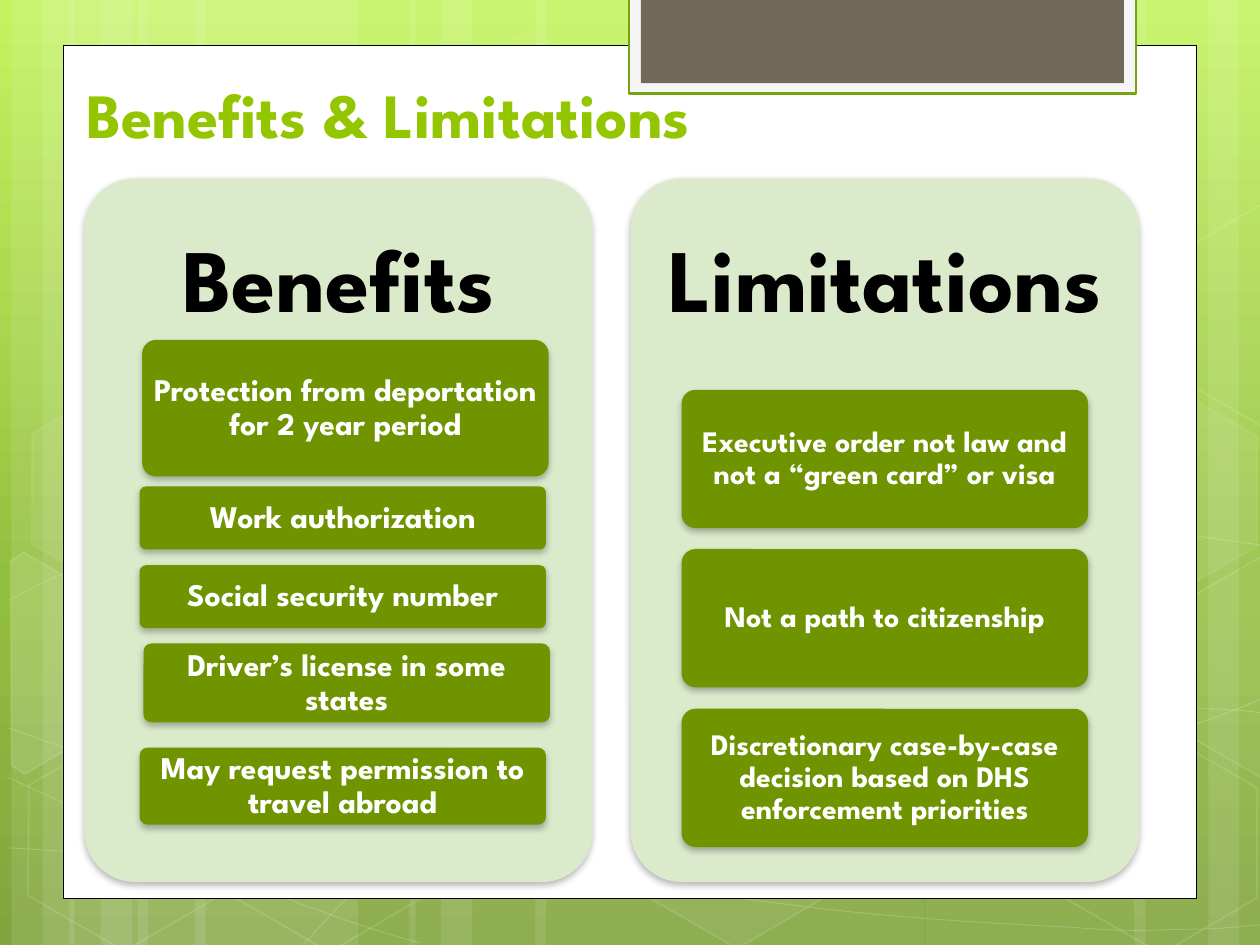
import pptx
import pptx.util
import pptx.dml.color
import pptx.enum.shapes
import pptx.enum.text
import pptx.oxml
import pptx.oxml.ns

Pt = pptx.util.Pt
RGB = pptx.dml.color.RGBColor
KIND = pptx.enum.shapes.MSO_SHAPE
ALIGN = pptx.enum.text.PP_ALIGN
ANCHOR = pptx.enum.text.MSO_ANCHOR
qn = pptx.oxml.ns.qn

WHITE = RGB(0xFF, 0xFF, 0xFF)
BLACK = RGB(0, 0, 0)
LIME = RGB(0x94, 0xC6, 0x00)
MINT = RGB(0xDC, 0xEA, 0xCC)
GREEN = RGB(0x6F, 0x94, 0x00)
EDGE = RGB(0x74, 0xA5, 0x10)
PALE = RGB(0xF5, 0xF5, 0xF5)
BROWN = RGB(0x71, 0x68, 0x5A)
SKY = [(0, "C3F35F"), (62, "93BF3F"), (100, "81A53E")]
FONT = "League Spartan"
NS = 'xmlns:a="http://schemas.openxmlformats.org/drawingml/2006/main"'
SHADOW = (f'<a:outerShdw {NS} blurRad="50800" dist="25400" dir="5400000" rotWithShape="0">'
          '<a:srgbClr val="000000"><a:alpha val="28000"/></a:srgbClr></a:outerShdw>')


def paint(shape, fill=None, line=None, width=1, solid=100, ink=100):
    """Set fill and line; solid and ink are their opacities in percent."""
    shape.shadow.inherit = False
    for part, color, alpha in ((shape.fill, fill, solid), (shape.line.fill, line, ink)):
        if color is None or alpha == 0:
            part.background()
            continue
        part.solid()
        part.fore_color.rgb = color
        if alpha < 100:
            tint = part._xPr.find(".//" + qn("a:srgbClr"))
            tint.append(pptx.oxml.parse_xml(f'<a:alpha {NS} val="{alpha * 1000}"/>'))
    if line is not None:
        shape.line.width = Pt(width)


def write(frame, text, size, color, anchor, align, pad):
    """Put one bold paragraph in the frame; pad is its side and top margin."""
    frame.word_wrap = True
    frame.auto_size = pptx.enum.text.MSO_AUTO_SIZE.NONE
    frame.vertical_anchor = anchor
    frame.margin_left = frame.margin_right = Pt(pad[0])
    frame.margin_top = frame.margin_bottom = Pt(pad[1])
    para = frame.paragraphs[0]
    para.text = text
    para.alignment = align
    para.line_spacing = 0.9
    font = para.font
    font.name, font.size, font.bold = FONT, Pt(size), True
    font.color.rgb = color


deck = pptx.Presentation()
deck.slide_width, deck.slide_height = Pt(720), Pt(540)
slide = deck.slides.add_slide(deck.slide_layouts[5])
shapes = slide.shapes

# Backdrop gradient
back = slide.background.fill
back.gradient()
back.gradient_angle = 270
stops = back._fill._gradFill.find(qn("a:gsLst"))
for stop in list(stops):
    stops.remove(stop)
for pos, color in SKY:
    stops.append(pptx.oxml.parse_xml(
        f'<a:gs {NS} pos="{pos * 1000}"><a:srgbClr val="{color}"/></a:gs>'))

# Light vertical bars: left, width, turn
bars = [(78.5, 126, 0), (6.5, 36, 0), (24.5, 60, 0), (111.5, 126, 0), (39.5, 36, 0),
        (57.5, 60, 0), (528.5, 126, 180), (690.5, 36, 180), (648, 60, 180),
        (306, 222, 0), (234, 36, 0), (252, 60, 0)]
for left, wide, turn in bars:
    bar = shapes.add_shape(KIND.RECTANGLE, Pt(left), 0, Pt(wide), Pt(540))
    bar.rotation = turn
    paint(bar, WHITE, solid=10)

# Thin curves: a start, then three Bezier points for each piece
curves = [
    [(5, 484.5), (44, 487), (83, 489), (137, 488), (191, 487), (258, 486), (330, 479),
     (402, 472), (504, 458), (570, 444), (636, 431), (703, 409), (725, 397)],
    [(5, 343), (26, 332), (47, 321), (87, 310), (128, 299), (186, 284), (250, 279),
     (314, 274), (392, 273), (471, 279), (550, 284), (682, 307), (725, 312)],
    [(4, 444), (91, 484), (178, 523), (241, 539)],
    [(5, 416), (27, 424), (50, 432), (92, 443.5), (134, 454), (197, 472), (257, 485),
     (317, 497), (392, 510), (452, 517), (512, 525), (576, 528), (614, 530),
     (652, 533), (662, 531), (680, 531), (699, 531), (712, 529), (725, 528)],
    [(174, 539), (187, 525), (200, 510), (217, 497), (235, 484), (259, 470), (279, 460),
     (300, 450), (312, 446), (338, 438), (364, 431), (413, 421), (438, 416),
     (464, 411), (467, 411), (490, 410), (512, 408), (547, 405), (572, 405),
     (597, 404), (638, 405), (638, 405), (654, 405), (670, 405), (686, 405),
     (699, 405), (711, 406), (718, 407), (724, 408), (722, 407), (724, 408)],
]
for nodes in curves:
    dots = [(Pt(x), Pt(y)) for x, y in nodes]
    pen = shapes.build_freeform(*dots[0])
    pen.add_line_segments(dots[1:], close=False)
    curve = pen.convert_to_shape()
    trail = curve._element.spPr.find(".//" + qn("a:path"))
    legs = trail.findall(qn("a:lnTo"))
    for i in range(0, len(legs), 3):
        bend = pptx.oxml.parse_xml(f"<a:cubicBezTo {NS}/>")
        trail.append(bend)
        for leg in legs[i:i + 3]:
            bend.append(leg[0])
            trail.remove(leg)
    paint(curve, None, WHITE, 0.5, ink=20)

# Hexagons, whole and cut off at the slide's edges
hexes = [(240.5, 26, 4, 8), (358, 424, 6, 12), (8, 425.5, 0, 12), (10, 224.5, 7, 8),
         (125, 426, 0, 12), (542, 326, 10, 12), (600.5, 427, 0, 12), (600.5, 226, 7, 8)]
for left, top, solid, ink in hexes:
    cell = shapes.add_shape(KIND.HEXAGON, Pt(left), Pt(top), Pt(126), Pt(109.5))
    cell.adjustments[0], cell.adjustments[1] = 0.285, 1.155
    cell.rotation = 30
    paint(cell, WHITE, WHITE, 1, solid, ink)

# Offsets from the centre, before the turn
west = [(-50, -47), (-46, -55), (18, -54.5), (49, 0), (18, 54.5), (9, 54)]
east = [(-49, -1), (-18, -55), (-12, -55), (48.5, 49.5), (45.5, 54.5), (-17.5, 54.5)]
for nodes, midx, midy, solid in ((west, 26, 386, 10), (east, 709, 374.5, 4),
                                 (east, 709, 173.5, 0)):
    dots = [(Pt(midx + x), Pt(midy + y)) for x, y in nodes]
    pen = shapes.build_freeform(*dots[0])
    pen.add_line_segments(dots[1:])
    cell = pen.convert_to_shape()
    cell.rotation = 30
    paint(cell, WHITE, WHITE, 1, solid, 12)

# White page and the tab at its top
for left, top, wide, high, fill, line, width in (
        (36, 26, 648, 487.5, WHITE, BLACK, 0.5),
        (359.25, -1.75, 289.75, 55.25, PALE, EDGE, 1.25),
        (366.25, -1.5, 276, 49, BROWN, None, 0)):
    page = shapes.add_shape(KIND.RECTANGLE, Pt(left), Pt(top), Pt(wide), Pt(high))
    paint(page, fill, line, width)

title = shapes.title
title.left, title.top, title.width, title.height = Pt(42), Pt(42), Pt(552), Pt(48)
write(title.text_frame, "Benefits & Limitations", 36, LIME, ANCHOR.BOTTOM, ALIGN.LEFT, (7.2, 3.6))
title.text_frame.paragraphs[0].line_spacing = 1
shapes._spTree.append(title._element)

# Two panels; each card is left, top, height, text
columns = [
    (48.25, "Benefits", 18, [
        (81.25, 194.25, 78, "Protection from deportation for 2 year period"),
        (79.75, 278, 36, "Work authorization"),
        (79.75, 323, 36, "Social security number"),
        (82, 367.75, 45, "Driver’s license in some states"),
        (79.75, 427.25, 44, "May request permission to travel abroad")]),
    (360.5, "Limitations", 17, [
        (389.5, 222.75, 79, "Executive order not law and not a “green card” or visa"),
        (389.5, 313.75, 79, "Not a path to citizenship"),
        (389.5, 405, 79,
         "Discretionary case-by-case decision based on DHS enforcement priorities")]),
]
for side, head, size, cards in columns:
    for left, top, wide, high, text, fill in (
            [(side, 102, 290.5, 402, "", MINT)]
            + [(x, y, 232.25, h, words, GREEN) for x, y, h, words in cards]):
        card = shapes.add_shape(KIND.ROUNDED_RECTANGLE, Pt(left), Pt(top), Pt(wide), Pt(high))
        card.adjustments[0] = 0.1
        paint(card, fill)
        card._element.spPr.find(qn("a:effectLst")).append(pptx.oxml.parse_xml(SHADOW))
        if text:
            write(card.text_frame, text, size, WHITE, ANCHOR.MIDDLE, ALIGN.CENTER, (3.6, 2.7))
    label = shapes.add_textbox(Pt(side), Pt(102), Pt(290.5), Pt(120))
    write(label.text_frame, head, 51, BLACK, ANCHOR.MIDDLE, ALIGN.CENTER, (15, 15))

deck.save("out.pptx")
